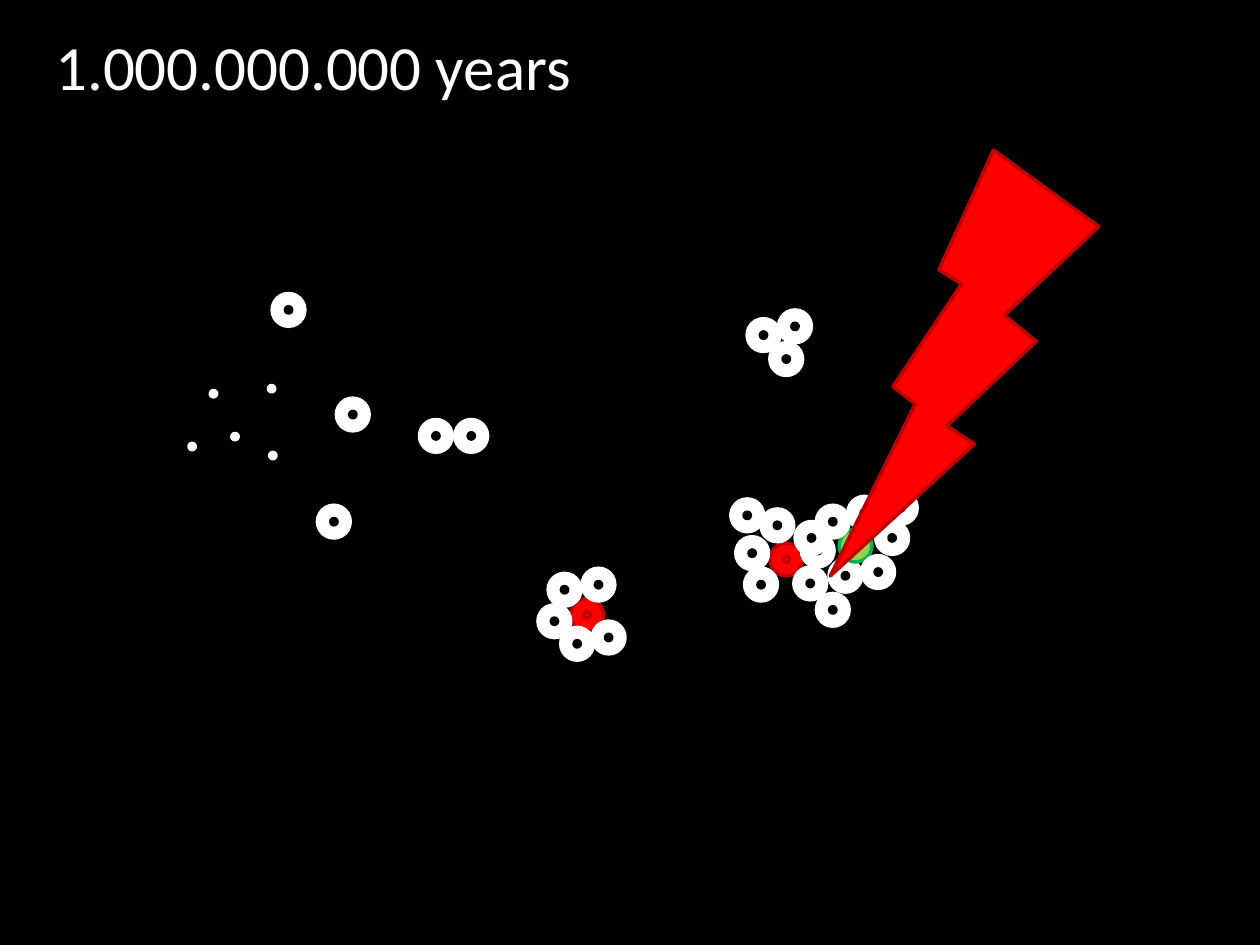
import pptx
import pptx.dml.color
import pptx.enum.shapes
import pptx.enum.text
import pptx.util

Pt = pptx.util.Pt
SHAPE = pptx.enum.shapes.MSO_SHAPE

# Content: all positions are circle centres in points
TITLE = "1.000.000.000 years"
ATOM_SIZE, DOT_SIZE = 18.7, 3.6

# kind: (shell fill, shell line, core fill, core line)
KINDS = {
    "white": ("FFFFFF", "FFFFFF", "000000", "000000"),
    "red": ("FF0000", "C00000", "FF0000", "C00000"),
    "green": ("92D050", "00B050", "92D050", "00B050"),
}
PARTICLES = [(134.3, 249.5), (155.2, 222.1), (109.8, 255.2), (122, 225), (155.9, 260.3)]

# Clusters from back to front, each a list of (kind, centres)
CLUSTERS = [
    [("white", [(201.6, 236.9), (249.1, 249.1), (164.9, 177.1), (190.8, 298.1),
                (269.3, 249.1)])],
    [("white", [(436.3, 191.5), (449.3, 205.2), (454.3, 186.5)])],
    [("red", [(449.3, 319.7)]),
     ("white", [(463, 333.4), (467.3, 314.6), (483.1, 329), (475.9, 348.5)]),
     ("green", [(488.9, 311.8)]),
     ("white", [(475.9, 298.1), (493.9, 293), (509.8, 307.4), (501.8, 326.9),
                (514.8, 290.2), (434.9, 334.1), (429.8, 316.1), (444.2, 300.2),
                (463.7, 307.4), (427, 294.5)])],
    [("red", [(335.5, 351.4)]),
     ("white", [(322.6, 337), (347.8, 364.3), (342, 334.1), (316.8, 355),
                (329.8, 367.9)])],
]


def rgb(color):
    return pptx.dml.color.RGBColor.from_string(color)


def add_shape(shapes, kind, x, y, w, h, fill, line):
    sp = shapes.add_shape(kind, Pt(x), Pt(y), Pt(w), Pt(h))
    sp.shadow.inherit = False
    sp.fill.solid()
    sp.fill.fore_color.rgb = rgb(fill)
    sp.line.color.rgb = rgb(line)
    sp.line.width = Pt(2)
    return sp


def add_circle(shapes, cx, cy, size, fill, line):
    add_shape(shapes, SHAPE.OVAL, cx - size / 2, cy - size / 2, size, size, fill, line)


def add_atom(shapes, cx, cy, kind):
    shell_fill, shell_line, core_fill, core_line = KINDS[kind]
    add_circle(shapes, cx, cy, ATOM_SIZE, shell_fill, shell_line)
    add_circle(shapes, cx, cy, DOT_SIZE, core_fill, core_line)


prs = pptx.Presentation()
prs.slide_width, prs.slide_height = Pt(720), Pt(540)
s = prs.slides.add_slide(prs.slide_layouts[6])
s.background.fill.solid()
s.background.fill.fore_color.rgb = rgb("000000")

# Loose particles
group = s.shapes.add_group_shape()
for cx, cy in PARTICLES:
    add_circle(group.shapes, cx, cy, DOT_SIZE, "FFFFFF", "FFFFFF")

# Atoms and molecules
for cluster in CLUSTERS:
    group = s.shapes.add_group_shape()
    for kind, centres in cluster:
        for cx, cy in centres:
            add_atom(group.shapes, cx, cy, kind)

# Lightning bolt, mirrored to strike down to the left
bolt = add_shape(s.shapes, SHAPE.LIGHTNING_BOLT, 474.5, 85.7, 153.4, 243.4, "FF0000", "C00000")
bolt.element.spPr.xfrm.set("flipH", "1")

# Title
sp = add_shape(s.shapes, SHAPE.RECTANGLE, 24.5, 21.6, 331.9, 31.7, "000000", "000000")
tf = sp.text_frame
tf.text = TITLE
tf.word_wrap = True
tf.vertical_anchor = pptx.enum.text.MSO_ANCHOR.MIDDLE
p = tf.paragraphs[0]
p.alignment = pptx.enum.text.PP_ALIGN.LEFT
r = p.runs[0]
r.font.name = "Calibri"
r.font.size = Pt(36)
r.font.color.rgb = rgb("FFFFFF")

prs.save("out.pptx")
